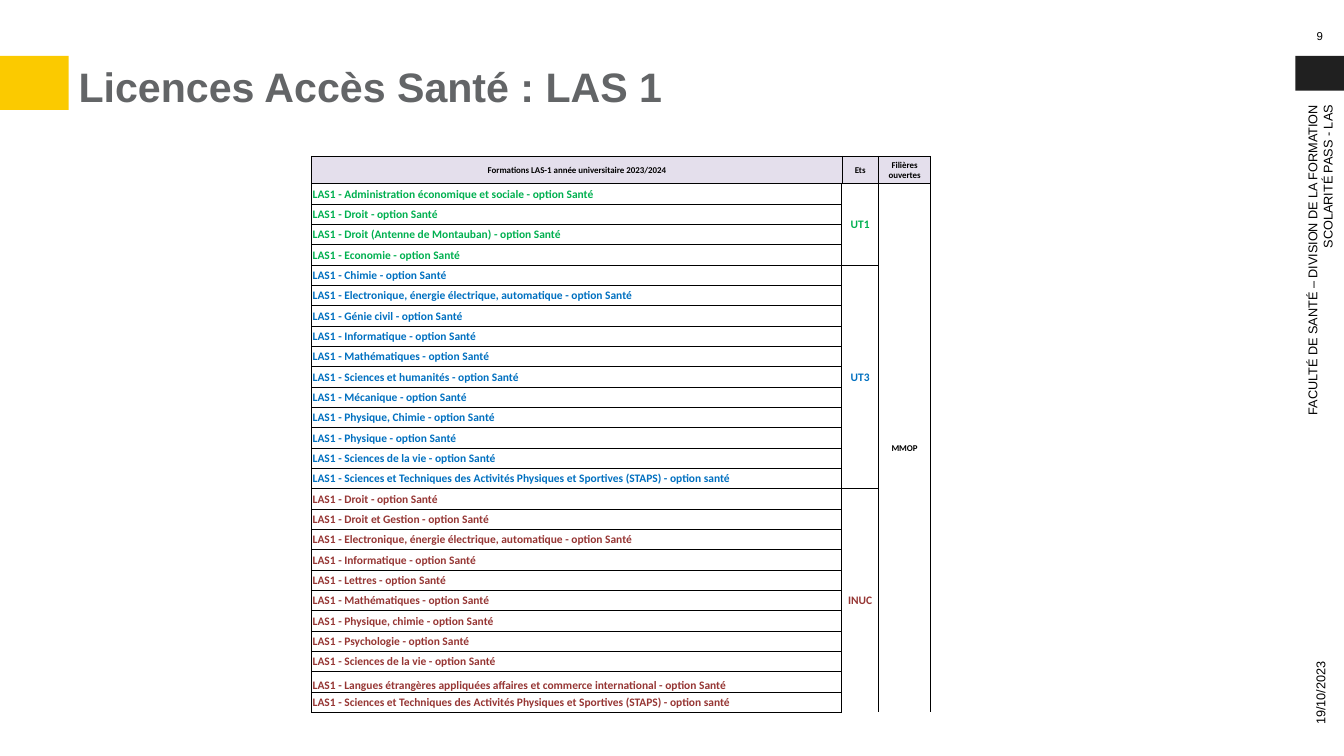
from dataclasses import dataclass
from typing import NamedTuple

from lxml import etree
from pptx import Presentation
from pptx.dml.color import RGBColor
from pptx.enum import shapes, text
from pptx.oxml import ns
from pptx.util import Pt


@dataclass(frozen=True)
class Theme:
    black: str = "000000"
    tab: str = "202020"
    accent: str = "FBCA00"
    title: str = "636567"
    header: str = "E4DFEC"
    sans: str = "Arial"
    table_font: str = "Calibri"
    title_size: float = 32.4
    side_size: float = 10
    number_size: float = 9
    course_size: float = 9
    header_size: float = 7
    thick: float = 1
    thin: float = 0.5


class Box(NamedTuple):
    left: float
    top: float
    width: float
    height: float

    def lengths(self) -> list[Pt]:
        return [Pt(value) for value in self]


class Block(NamedTuple):
    box: Box
    color: str


class Label(NamedTuple):
    box: Box
    words: str
    size: float
    align: text.PP_ALIGN
    rotation: float = 0


class School(NamedTuple):
    name: str
    color: str
    courses: list[str]


class Edges(NamedTuple):
    """Border widths of a cell; zero hides that side."""
    left: float
    right: float
    top: float
    bottom: float


THEME = Theme()
LEFT, CENTER, RIGHT = text.PP_ALIGN.LEFT, text.PP_ALIGN.CENTER, text.PP_ALIGN.RIGHT
MIDDLE, BOTTOM = text.MSO_ANCHOR.MIDDLE, text.MSO_ANCHOR.BOTTOM

BLOCKS = [
    Block(Box(1020.2, 44, 38.2, 27.4), THEME.tab),
    Block(Box(0, 44, 54, 42.5), THEME.accent),
]
LABELS = [
    Label(Box(1020.2, 12.2, 38.2, 31.7), "9", THEME.number_size, CENTER),
    Label(Box(1004.4, 529.2, 70.6, 38.2), "19/10/2023", THEME.side_size, RIGHT, 270),
    Label(Box(820.1, 275, 438.5, 38.2),
          "FACULTÉ DE SANTÉ – DIVISION DE LA FORMATION\nSCOLARITÉ PASS - LAS",
          THEME.side_size, RIGHT, 270),
]
HEADINGS = ["Formations LAS-1 année universitaire 2023/2024", "Ets", "Filières ouvertes"]
STAPS = "Sciences et Techniques des Activités Physiques et Sportives (STAPS) - option santé"
LANGUAGES = "Langues étrangères appliquées affaires et commerce international"
SCHOOLS = [
    School("UT1", "00B050", [
        "Administration économique et sociale", "Droit",
        "Droit (Antenne de Montauban)", "Economie"]),
    School("UT3", "0070C0", [
        "Chimie", "Electronique, énergie électrique, automatique", "Génie civil",
        "Informatique", "Mathématiques", "Sciences et humanités", "Mécanique",
        "Physique, Chimie", "Physique", "Sciences de la vie", STAPS]),
    School("INUC", "963634", [
        "Droit", "Droit et Gestion", "Electronique, énergie électrique, automatique",
        "Informatique", "Lettres", "Mathématiques", "Physique, chimie", "Psychologie",
        "Sciences de la vie", LANGUAGES, STAPS]),
]
TABLE_BOX = Box(245.6, 123.1, 487.4, 438.4)
COLUMN_WIDTHS = [417.4, 28.8, 41.2]
HEADER_HEIGHT, COURSE_HEIGHT = 21.6, 16.03


def write(frame, words: str, *, size: float, color: str = THEME.black, font: str = THEME.sans,
          bold: bool = False, align: text.PP_ALIGN = LEFT) -> None:
    """Put each line of words in its own formatted paragraph."""
    frame.text = words
    for paragraph in frame.paragraphs:
        paragraph.alignment = align
        for run in paragraph.runs:
            run.font.size, run.font.name, run.font.bold = Pt(size), font, bold
            run.font.color.rgb = RGBColor.from_string(color)


def set_margins(frame) -> None:
    frame.margin_left = frame.margin_right = Pt(7.9)
    frame.margin_top = frame.margin_bottom = Pt(4)
    frame.word_wrap = True


def add_block(slide, block: Block) -> None:
    shape = slide.shapes.add_shape(shapes.MSO_SHAPE.RECTANGLE, *block.box.lengths())
    shape.shadow.inherit = False
    shape.fill.solid()
    shape.fill.fore_color.rgb = RGBColor.from_string(block.color)
    shape.line.fill.background()


def add_label(slide, label: Label) -> None:
    side_text = slide.shapes.add_textbox(*label.box.lengths())
    side_text.rotation = label.rotation
    set_margins(side_text.text_frame)
    side_text.text_frame.vertical_anchor = MIDDLE
    write(side_text.text_frame, label.words, size=label.size, align=label.align)


def set_title(slide, words: str) -> None:
    title = slide.shapes.title
    title.left, title.top, title.width, title.height = Box(54, 44, 928.1, 95).lengths()
    set_margins(title.text_frame)
    title.text_frame.auto_size = text.MSO_AUTO_SIZE.NONE
    title.text_frame.vertical_anchor = text.MSO_ANCHOR.TOP
    write(title.text_frame, words, size=THEME.title_size, color=THEME.title, bold=True)


def set_borders(cell, edges: Edges) -> None:
    properties = cell._tc.get_or_add_tcPr()
    for index, (side, width) in enumerate(zip("LRTB", edges)):
        line = etree.Element(ns.qn(f"a:ln{side}"), w=str(int(Pt(width))))
        if width:
            fill = etree.SubElement(line, ns.qn("a:solidFill"))
            etree.SubElement(fill, ns.qn("a:srgbClr"), val=THEME.black)
        else:
            etree.SubElement(line, ns.qn("a:noFill"))
        properties.insert(index, line)


def fill_cell(cell, words: str, edges: Edges, *, size: float, color: str = THEME.black,
              align: text.PP_ALIGN = CENTER, anchor: text.MSO_ANCHOR = MIDDLE,
              background: str = "") -> None:
    cell.margin_left = cell.margin_right = cell.margin_top = Pt(0.7)
    cell.margin_bottom = Pt(0)
    cell.vertical_anchor = anchor
    if background:
        cell.fill.solid()
        cell.fill.fore_color.rgb = RGBColor.from_string(background)
    else:
        cell.fill.background()
    set_borders(cell, edges)
    write(cell.text_frame, words, size=size, color=color, font=THEME.table_font,
          bold=True, align=align)


def fill_span(table, column: int, first: int, last: int, words: str, edges: Edges, *,
              size: float, color: str = THEME.black) -> None:
    """Merge part of a column and keep only its outer borders."""
    table.cell(first, column).merge(table.cell(last, column))
    for row in range(first, last + 1):
        outer = edges._replace(top=edges.top if row == first else 0,
                               bottom=edges.bottom if row == last else 0)
        fill_cell(table.cell(row, column), words if row == first else "", outer,
                  size=size, color=color)


def add_courses(slide) -> None:
    thick, thin = THEME.thick, THEME.thin
    last_row = sum(len(school.courses) for school in SCHOOLS)
    table = slide.shapes.add_table(last_row + 1, len(HEADINGS), *TABLE_BOX.lengths()).table
    table.first_row = table.horz_banding = False
    for column, width in zip(table.columns, COLUMN_WIDTHS):
        column.width = Pt(width)
    for index, row in enumerate(table.rows):
        row.height = Pt(COURSE_HEIGHT if index else HEADER_HEIGHT)

    for column, heading in enumerate(HEADINGS):
        edges = Edges(thin if column else thick, thick if column == 2 else thin, thick, thick)
        fill_cell(table.cell(0, column), heading, edges, size=THEME.header_size,
                  background=THEME.header)
    first = 1
    for school in SCHOOLS:
        last = first + len(school.courses) - 1
        for row, course in enumerate(school.courses, first):
            ending = "" if course == STAPS else " - option Santé"
            edges = Edges(thick, thick, thick if row == first else thin,
                          thick if row == last else thin)
            fill_cell(table.cell(row, 0), f"LAS1 - {course}{ending}", edges,
                      size=THEME.course_size, color=school.color, align=LEFT,
                      anchor=BOTTOM if course == LANGUAGES else MIDDLE)
        fill_span(table, 1, first, last, school.name, Edges(thick, thin, thick, thick),
                  size=THEME.course_size, color=school.color)
        first = last + 1
    fill_span(table, 2, 1, last_row, "MMOP", Edges(thin, thick, thick, thin),
              size=THEME.header_size)


def main() -> None:
    deck = Presentation()
    deck.slide_width, deck.slide_height = Pt(1058.4), Pt(595.44)
    slide = deck.slides.add_slide(deck.slide_layouts.get_by_name("Title Only"))
    for block in BLOCKS:
        add_block(slide, block)
    set_title(slide, "Licences Accès Santé : LAS 1")
    for label in LABELS:
        add_label(slide, label)
    add_courses(slide)
    deck.save("out.pptx")


if __name__ == "__main__":
    main()
